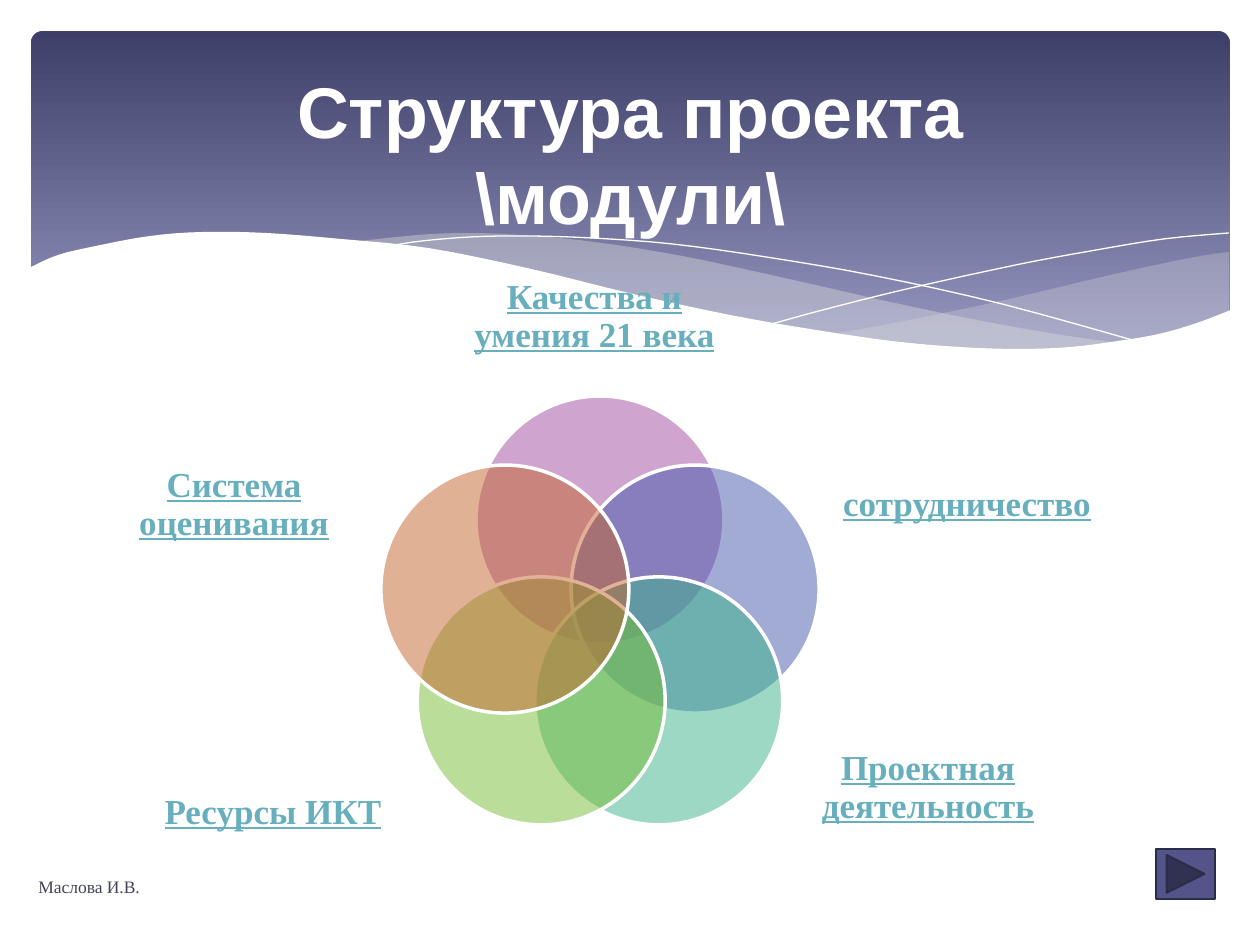
import math
import pptx
import pptx.util
import pptx.dml.color
import pptx.enum.shapes
import pptx.enum.text
import pptx.oxml
import pptx.oxml.ns

PX = 914400 // 126
SHAPE = pptx.enum.shapes.MSO_SHAPE
ALIGN = pptx.enum.text.PP_ALIGN
ANCHOR = pptx.enum.text.MSO_ANCHOR

TITLE = ["Структура проекта", "\\модули\\"]
AUTHOR = "Маслова И.В."
MODULES = [
    ("Качества и умения 21 века", "A04DA3", (451, 234, 287, 166)),
    ("сотрудничество", "4558AB", (838, 415, 258, 180)),
    ("Проектная деятельность", "3DB38C", (799, 698, 258, 180)),
    ("Ресурсы ИКТ", "76BC35", (144, 723, 258, 180)),
    ("Система оценивания", "C4652D", (105, 415, 258, 180)),
]
RING_CENTER, RING_RADIUS, CIRCLE = (600, 620), 100, 248

RIGHT_TOP = [(1229, 252), (1195, 257), (1142, 268), (1085, 281), (1014, 298),
             (949, 312), (889, 324), (833, 334)]
RIGHT_BOTTOM = [(833, 334), (906, 342), (969, 348), (1026, 350), (1076, 349),
                (1120, 345), (1160, 337), (1195, 327), (1229, 311)]
MIDDLE_TOP = [(360, 241), (433, 234), (503, 234), (586, 241), (682, 256),
              (793, 280), (890, 302), (977, 320), (1055, 334), (1125, 344)]
MIDDLE_BOTTOM = [(1125, 344), (1068, 349), (1003, 350), (927, 346), (838, 335),
                 (735, 317), (619, 292), (566, 280), (483, 260), (407, 247), (360, 241)]
FALLING_LINE = [(389, 246), (422, 241), (471, 237), (524, 236), (591, 238),
                (672, 244), (766, 257), (876, 276), (1002, 304), (1143, 343)]
RISING_LINE = [(772, 324), (823, 310), (907, 289), (1016, 265), (1091, 251),
               (1164, 239), (1229, 233)]
FRONT_EDGE = [(29, 268), (58, 255), (96, 246), (150, 236), (203, 232), (266, 233),
              (341, 239), (428, 248), (527, 268), (633, 294), (730, 315), (816, 330),
              (892, 341), (959, 347), (1019, 349), (1071, 347), (1118, 341),
              (1159, 334), (1197, 323), (1231, 310)]
FRONT_BASE = [(1231, 415), (29, 415)]

THEME = {
    "white": "FFFFFF", "wave": "DEDEDE", "band": ("3E3F68", "9394BE"),
    "label": "67AFBD", "author": "424456", "button": "53548A", "button_line": "2B2C48",
    "head_font": "Arial", "body_font": "Times New Roman",
    "title_size": 41, "label_size": 20, "author_size": 10,
}


def rgb(color):
    return pptx.dml.color.RGBColor.from_string(color)


def emu(*lengths):
    return [round(v * PX) for v in lengths]


def paint(sp, fill=None, alpha=None, line=None, width=0):
    sp.shadow.inherit = False
    if fill:
        sp.fill.solid()
        sp.fill.fore_color.rgb = rgb(fill)
        if alpha:
            clr = sp.fill._xPr.find(".//" + pptx.oxml.ns.qn("a:srgbClr"))
            clr.append(pptx.oxml.parse_xml(
                f'<a:alpha {pptx.oxml.ns.nsdecls("a")} val="{alpha * 1000}"/>'))
    else:
        sp.fill.background()
    if line:
        sp.line.color.rgb = rgb(line)
        sp.line.width = pptx.util.Pt(width)
    else:
        sp.line.fill.background()


def smooth(points, steps=4):
    ends = [points[0]] + points + [points[-1]]
    curve = [points[0]]
    for a, b, c, d in zip(ends, ends[1:], ends[2:], ends[3:]):
        for i in range(1, steps + 1):
            t = i / steps
            curve.append(tuple(
                0.5 * (2 * q + (r - p) * t + (2 * p - 5 * q + 4 * r - u) * t ** 2
                       + (3 * q - p - 3 * r + u) * t ** 3)
                for p, q, r, u in zip(a, b, c, d)))
    return curve


def add_outline(s, points, close=True, **style):
    points = [emu(*point) for point in points]
    builder = s.shapes.build_freeform(*points[0], scale=1.0)
    builder.add_line_segments(points[1:], close=close)
    paint(builder.convert_to_shape(), **style)


def add_run(p, text, font, size, color, bold=False, underline=False):
    r = p.add_run()
    r.text = text
    r.font.name = font
    r.font.size = pptx.util.Pt(size)
    r.font.color.rgb = rgb(color)
    r.font.bold = bold
    r.font.underline = underline


def add_text(s, box):
    tf = s.shapes.add_textbox(*emu(*box)).text_frame
    tf.word_wrap = True
    tf.vertical_anchor = ANCHOR.MIDDLE
    return tf


def add_backdrop(s):
    band = s.shapes.add_shape(SHAPE.ROUNDED_RECTANGLE, *emu(31, 31, 1199, 340))
    band.adjustments[0] = 0.034
    paint(band)
    band.fill.gradient()
    band.fill.gradient_angle = 270
    for stop, color, position in zip(band.fill.gradient_stops, THEME["band"], (0, 0.9)):
        stop.color.rgb = rgb(color)
        stop.position = position
    add_outline(s, smooth(RIGHT_TOP) + smooth(RIGHT_BOTTOM), fill=THEME["wave"], alpha=29)
    add_outline(s, smooth(MIDDLE_TOP) + smooth(MIDDLE_BOTTOM), fill=THEME["wave"], alpha=40)
    for line in (FALLING_LINE, RISING_LINE):
        add_outline(s, smooth(line), close=False, line=THEME["white"])
    add_outline(s, smooth(FRONT_EDGE) + FRONT_BASE, fill=THEME["white"])


def add_title(s):
    sp = s.shapes.title
    sp.left, sp.top, sp.width, sp.height = emu(64, 66, 1134, 173)
    s.shapes._spTree.append(sp._element)
    tf = sp.text_frame
    tf.word_wrap = True
    tf.auto_size = pptx.enum.text.MSO_AUTO_SIZE.NONE
    tf.vertical_anchor = ANCHOR.MIDDLE
    p = tf.paragraphs[0]
    p.alignment = ALIGN.CENTER
    for i, text in enumerate(TITLE):
        if i:
            p.add_line_break()
        add_run(p, text, THEME["head_font"], THEME["title_size"], THEME["white"], bold=True)


def add_modules(s):
    for i, (text, color, box) in enumerate(MODULES):
        angle = math.tau * i / len(MODULES)
        left = RING_CENTER[0] + RING_RADIUS * math.sin(angle) - CIRCLE / 2
        top = RING_CENTER[1] - RING_RADIUS * math.cos(angle) - CIRCLE / 2
        circle = s.shapes.add_shape(SHAPE.OVAL, *emu(left, top, CIRCLE, CIRCLE))
        paint(circle, color, 50, THEME["white"], 2)
        tf = add_text(s, box)
        tf.margin_left = tf.margin_right = tf.margin_top = tf.margin_bottom = 0
        p = tf.paragraphs[0]
        p.alignment = ALIGN.CENTER
        p.line_spacing = 0.9
        add_run(p, text, THEME["body_font"], THEME["label_size"], THEME["label"],
                bold=True, underline=True)


def main():
    prs = pptx.Presentation()
    prs.slide_width, prs.slide_height = emu(1260, 945)
    s = prs.slides.add_slide(prs.slide_layouts[5])
    add_backdrop(s)
    add_title(s)
    add_modules(s)
    tf = add_text(s, (26, 862, 522, 50))
    add_run(tf.paragraphs[0], AUTHOR, THEME["body_font"], THEME["author_size"], THEME["author"])
    button = s.shapes.add_shape(SHAPE.ACTION_BUTTON_FORWARD_OR_NEXT, *emu(1156, 849, 59, 50))
    paint(button, THEME["button"], line=THEME["button_line"], width=1.25)
    prs.save("out.pptx")


if __name__ == "__main__":
    main()
